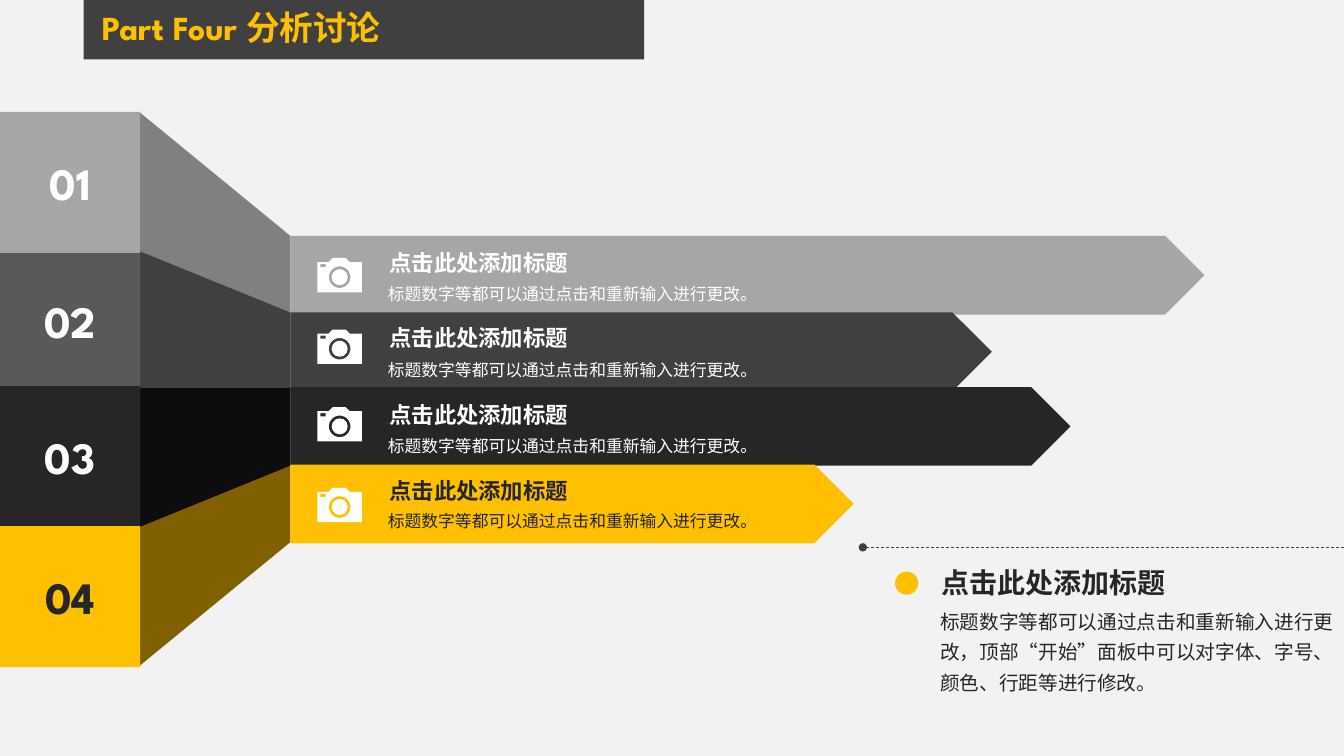
import math

import pptx
import pptx.dml.color
import pptx.enum.dml
import pptx.enum.shapes
import pptx.enum.text
import pptx.oxml
import pptx.oxml.ns
import pptx.util

PX = 9144  # 100 px to the inch
FONT = "League Spartan"
SHAPE = pptx.enum.shapes.MSO_SHAPE
ALIGN = pptx.enum.text.PP_ALIGN
ANCHOR = pptx.enum.text.MSO_ANCHOR
rgb = pptx.dml.color.RGBColor.from_string

prs = pptx.Presentation()
prs.slide_width, prs.slide_height = pptx.util.Emu(12192000), 750 * PX
s = prs.slides.add_slide(prs.slide_layouts[5])
s.background.fill.solid()
s.background.fill.fore_color.rgb = rgb("F2F2F2")


def paint(sp, color):
    sp.fill.solid()
    sp.fill.fore_color.rgb = rgb(color)
    sp.line.fill.background()
    sp.shadow.inherit = False
    return sp


def write(sp, text, size, color, align, bold=True, spacing=1.0, wrap=True, anchor=ANCHOR.TOP):
    tf = sp.text_frame
    tf.word_wrap = wrap
    tf.vertical_anchor = anchor
    p = tf.paragraphs[0]
    p.alignment = align
    p.line_spacing = spacing
    r = p.add_run()
    r.text = text
    r.font.name = FONT
    r.font.size = pptx.util.Pt(size)
    r.font.bold = bold
    r.font.color.rgb = rgb(color)


# Header band and title
band = paint(s.shapes.add_shape(SHAPE.RECTANGLE, 83 * PX, 0, 556 * PX, 59 * PX), "404040")
title = s.shapes.title
title.left, title.top, title.width, title.height = 91 * PX, 6 * PX, 375 * PX, 50 * PX
write(title, "Part Four 分析讨论", 24, "FFC000", ALIGN.LEFT, spacing=0.9)
title.text_frame.paragraphs[0].space_before = pptx.util.Pt(10)
band._element.addnext(title._element)

# Folded wedges between tabs and arrows: outer y, inner y, middle y
for outer, inner, middle, color in [
    (111, 234, 387, "808080"),
    (249, 310, 387, "404040"),
    (661, 538, 385, "806000"),
    (523, 462, 385, "0D0D0D"),
]:
    fb = s.shapes.build_freeform(288 * PX, inner * PX)
    fb.add_line_segments([(138 * PX, outer * PX), (138 * PX, middle * PX), (288 * PX, middle * PX)])
    paint(fb.convert_to_shape(), color)

# Number tabs
for number, y, fill, color in [
    ("02", 248, "595959", "FFFFFF"),
    ("03", 383, "262626", "FFFFFF"),
    ("04", 522, "FFC000", "262626"),
    ("01", 111, "A6A6A6", "FFFFFF"),
]:
    tab = paint(s.shapes.add_shape(SHAPE.RECTANGLE, 0, y * PX, 139 * PX, 140 * PX), fill)
    write(tab, number, 32, color, ALIGN.CENTER, anchor=ANCHOR.MIDDLE)

# Camera outline, flash and lens opening, from the icon's top left corner
body = [(0, 4), (11, 4), (15, 0), (28, 0), (32, 4), (44, 4), (44, 34), (0, 34)]
flash = [(3, 6), (3, 9), (8, 9), (8, 6)]
angles = [math.radians(a) for a in range(0, 360, 10)]
opening = [(22 + 10.7 * math.cos(a), 19 - 10.7 * math.sin(a)) for a in angles]

# Arrows: top, width, heading top, detail top, icon top
for y, width, head_y, detail_y, icon_y, fill, color in [
    (234, 907, 242, 271, 256, "A6A6A6", "FFFFFF"),
    (310, 696, 317, 346, 327, "404040", "FFFFFF"),
    (384, 774, 393, 421, 404, "262626", "FFFFFF"),
    (461, 559, 468, 496, 484, "FFC000", "262626"),
]:
    paint(s.shapes.add_shape(SHAPE.PENTAGON, 288 * PX, y * PX, width * PX, 78 * PX), fill)
    tb = s.shapes.add_textbox(375 * PX, head_y * PX, 200 * PX, 37 * PX)
    write(tb, "点击此处添加标题", 16, color, ALIGN.CENTER, wrap=False)
    tb = s.shapes.add_textbox(375 * PX, detail_y * PX, 943 * PX, 34 * PX)
    write(tb, "标题数字等都可以通过点击和重新输入进行更改。", 12, color, ALIGN.JUSTIFY, False, 1.3)

    fb = None
    for contour in (body, flash, opening):
        pts = [((315 + dx) * PX, (icon_y + dy) * PX) for dx, dy in contour]
        if fb is None:
            fb = s.shapes.build_freeform(*pts[0])
        else:
            fb.move_to(*pts[0])
        fb.add_line_segments(pts[1:])
    paint(fb.convert_to_shape(), "FFFFFF")
    paint(s.shapes.add_shape(SHAPE.OVAL, 329 * PX, (icon_y + 11) * PX, 16 * PX, 16 * PX), "FFFFFF")

# Dashed rule with a dot at its start
rule = s.shapes.add_connector(
    pptx.enum.shapes.MSO_CONNECTOR.STRAIGHT, 856 * PX, 543 * PX, 1333 * PX, 543 * PX)
rule.line.color.rgb = rgb("404040")
rule.line.width = pptx.util.Pt(0.5)
rule.line.dash_style = pptx.enum.dml.MSO_LINE.DASH
ns = pptx.oxml.ns.nsdecls("a")
rule.line._get_or_add_ln().append(pptx.oxml.parse_xml(f'<a:headEnd {ns} type="oval"/>'))
rule._element.spPr.append(pptx.oxml.parse_xml(f"<a:effectLst {ns}/>"))

# Closing note
tb = s.shapes.add_textbox(923 * PX, 556 * PX, 245 * PX, 44 * PX)
write(tb, "点击此处添加标题", 20, "262626", ALIGN.CENTER, wrap=False)
tb = s.shapes.add_textbox(923 * PX, 593 * PX, 410 * PX, 102 * PX)
write(tb, "标题数字等都可以通过点击和重新输入进行更改，顶部“开始”面板中可以对字体、字号、颜色、行距等进行修改。",
      14, "262626", ALIGN.JUSTIFY, False, 1.3)
paint(s.shapes.add_shape(SHAPE.OVAL, 888 * PX, 567 * PX, 23 * PX, 23 * PX), "FFC000")

prs.save("out.pptx")
